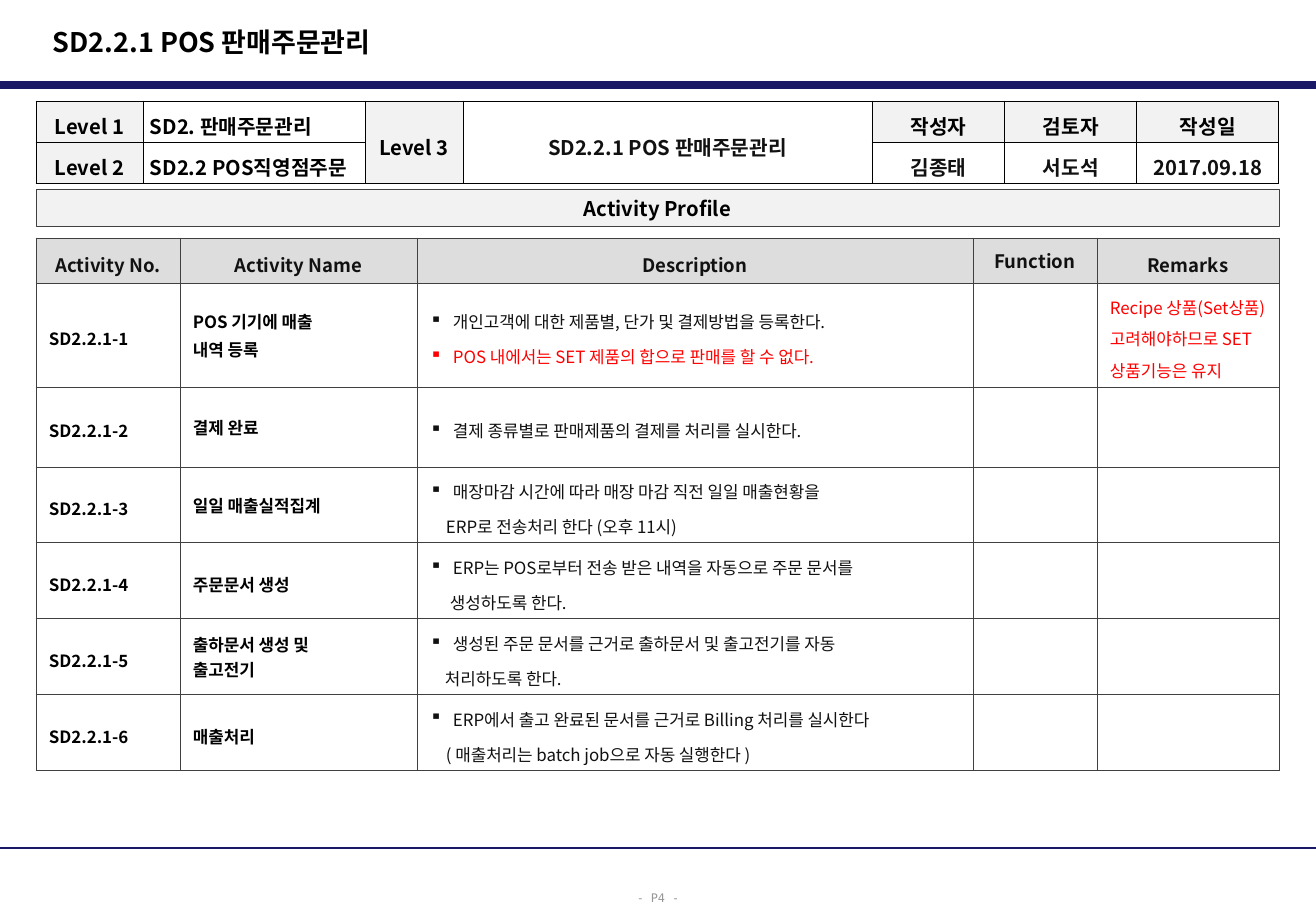
from pptx import Presentation
from pptx.dml.color import RGBColor
from pptx.enum.shapes import MSO_CONNECTOR, MSO_SHAPE
from pptx.enum.text import MSO_ANCHOR, PP_ALIGN
from pptx.oxml.ns import qn
from pptx.util import Pt
from lxml import etree

LEFT, CENTER = PP_ALIGN.LEFT, PP_ALIGN.CENTER
MIDDLE = MSO_ANCHOR.MIDDLE

TITLE = "SD2.2.1 POS 판매주문관리"
SECTION = "Activity Profile"
PAGE = "- P4 -"

LEVEL_COLS = [107, 222, 98, 409, 133, 132, 142]
LEVEL_ROWS = [41, 41]
LEVELS = [
    ["Level 1", "SD2. 판매주문관리", "Level 3", TITLE, "작성자", "검토자", "작성일"],
    ["Level 2", "SD2.2 POS직영점주문", None, None, "김종태", "서도석", "2017.09.18"],
]
LABEL_CELLS = {(0, 0), (1, 0), (0, 2), (0, 4), (0, 5), (0, 6)}
MERGED_COLS = (2, 3)

ACTIVITY_COLS = [144, 237, 556, 124, 182]
ACTIVITY_ROWS = [45, 104, 80, 76, 76, 76, 76]
HEADINGS = ["Activity No.", "Activity Name", "Description", "Function", "Remarks"]
# name lines, name line spacing, name paragraph gap,
# description lines as (text, colour key, indent in px; None for a bullet), remark
ACTIVITIES = [
    (["POS 기기에 매출", "내역 등록"], 1, 2,
     [("개인고객에 대한 제품별, 단가 및 결제방법을 등록한다.", "text", None),
      ("POS 내에서는 SET 제품의 합으로 판매를 할 수 없다.", "alert", None)],
     "Recipe 상품(Set상품)고려해야하므로 SET 상품기능은 유지"),
    (["결제 완료"], 1, 2,
     [("결제 종류별로 판매제품의 결제를 처리를 실시한다.", "text", None)], ""),
    (["일일 매출실적집계"], 1, 2,
     [("매장마감 시간에 따라 매장 마감 직전 일일 매출현황을", "text", None),
      ("ERP로 전송처리 한다 (오후 11시)", "text", 16)], ""),
    (["주문문서 생성"], 1.3, 2,
     [("ERP는 POS로부터 전송 받은 내역을 자동으로 주문 문서를", "text", None),
      ("생성하도록 한다.", "text", 20)], ""),
    (["출하문서 생성 및", "출고전기"], 1, 0,
     [("생성된 주문 문서를 근거로 출하문서 및 출고전기를 자동", "text", None),
      ("처리하도록 한다.", "text", 15)], ""),
    (["매출처리"], 1.3, 2,
     [("ERP에서 출고 완료된 문서를 근거로 Billing 처리를 실시한다", "text", None),
      ("( 매출처리는 batch job으로 자동 실행한다 )", "text", 16)], ""),
]

THEME = {
    "font": "Noto Sans CJK KR", "mono": "DejaVu Sans Mono",
    "black": "000000", "text": "111111", "alert": "FF0000", "page": "969696",
    "rule": "191966", "border": "404040", "label": "F2F2F2", "heading": "DDDDDD",
    "title_pt": 16, "level_pt": 12, "heading_pt": 11, "body_pt": 10, "page_pt": 7,
    "hairline_pt": 0.5,
}
EMU_PER_PX = 914400 / 121.5
SLIDE_W, SLIDE_H = 1316, 911
MARGIN, CONTENT_W = 36, 1243
BULLET_INDENT = 23


def px(n):
    return round(n * EMU_PER_PX)


def rgb(key):
    return RGBColor.from_string(THEME[key])


def set_indent(p, indent):
    """Indent a paragraph by px, or give it a hanging square bullet for None."""
    pPr = p._p.get_or_add_pPr()
    pPr.set("marL", str(px(BULLET_INDENT if indent is None else indent)))
    if indent is None:
        pPr.set("indent", str(-px(BULLET_INDENT)))
        etree.SubElement(pPr, qn("a:buChar")).set("char", "▪")


def write(tf, lines, size, bold=True, color="black", align=LEFT, spacing=1.3, gap=2, font="font"):
    """Fill a frame; a line is a string or (text, colour key, indent)."""
    for i, line in enumerate(lines):
        text, key, indent = (line, color, 0) if isinstance(line, str) else line
        p = tf.paragraphs[0] if i == 0 else tf.add_paragraph()
        p.text = text
        p.alignment = align
        p.line_spacing = spacing
        p.space_before = Pt(gap if i else 0)
        set_indent(p, indent)
        for r in p.runs:
            r.font.size, r.font.bold, r.font.name = Pt(THEME[size]), bold, THEME[font]
            r.font.color.rgb = rgb(key)
            etree.SubElement(r.font._element, qn("a:ea")).set("typeface", THEME[font])


def add_text(s, x, y, w, h, text, size, wrap=True, **style):
    tf = s.shapes.add_textbox(px(x), px(y), px(w), px(h)).text_frame
    tf.word_wrap, tf.vertical_anchor = wrap, MIDDLE
    write(tf, [text], size, **style)


def add_rule(s, y, weight):
    line = s.shapes.add_connector(MSO_CONNECTOR.STRAIGHT, 0, px(y), px(SLIDE_W), px(y))
    line.line.color.rgb, line.line.width = rgb("rule"), Pt(weight)
    etree.SubElement(line._element.spPr, qn("a:effectLst"))


def add_grid(s, y, cols, rows, border, inset_x, inset_y):
    """Add a plain table with every cell outlined."""
    frame = s.shapes.add_table(len(rows), len(cols), px(MARGIN), px(y),
                               px(sum(cols)), px(sum(rows)))
    table = frame.table
    table.first_row = table.horz_banding = False
    for col, w in zip(table.columns, cols):
        col.width = px(w)
    for row, h in zip(table.rows, rows):
        row.height = px(h)
    for cell in table.iter_cells():
        cell.margin_left = cell.margin_right = px(inset_x)
        cell.margin_top = cell.margin_bottom = px(inset_y)
        cell.vertical_anchor = MIDDLE
        tcPr = cell._tc.get_or_add_tcPr()
        for side in ("a:lnL", "a:lnR", "a:lnT", "a:lnB"):
            ln = etree.SubElement(tcPr, qn(side), w=str(Pt(THEME["hairline_pt"])))
            fill = etree.SubElement(ln, qn("a:solidFill"))
            etree.SubElement(fill, qn("a:srgbClr"), val=THEME[border])
        cell.fill.background()
    return table


def shade(cell, key):
    cell.fill.solid()
    cell.fill.fore_color.rgb = rgb(key)


def add_levels(s):
    table = add_grid(s, 101, LEVEL_COLS, LEVEL_ROWS, "black", 7, 1)
    for c in MERGED_COLS:
        table.cell(0, c).merge(table.cell(1, c))
    for r, row in enumerate(LEVELS):
        for c, text in enumerate(row):
            cell = table.cell(r, c)
            if (r, c) in LABEL_CELLS:
                shade(cell, "label")
            if text:
                color = "text" if c == 3 or (r == 1 and c > 3) else "black"
                write(cell.text_frame, [text], "level_pt", color=color,
                      align=LEFT if c == 1 else CENTER)


def add_activities(s):
    table = add_grid(s, 238, ACTIVITY_COLS, ACTIVITY_ROWS, "border", 13, 4)
    for c, text in enumerate(HEADINGS):
        shade(table.cell(0, c), "heading")
        write(table.cell(0, c).text_frame, [text], "heading_pt", color="text",
              align=CENTER, spacing=1 if text == "Function" else 1.3)
    for n, (name, spacing, gap, description, remark) in enumerate(ACTIVITIES, 1):
        number, title, detail, _, note = (table.cell(n, c).text_frame for c in range(5))
        write(number, [f"SD2.2.1-{n}"], "body_pt")
        write(title, name, "body_pt", spacing=spacing, gap=gap)
        write(detail, description, "body_pt", bold=False)
        if remark:
            write(note, [remark], "body_pt", bold=False, color="alert")


def add_section_bar(s):
    bar = s.shapes.add_shape(MSO_SHAPE.RECTANGLE, px(MARGIN), px(189), px(CONTENT_W), px(38))
    bar.shadow.inherit = False
    shade(bar, "label")
    bar.line.color.rgb, bar.line.width = rgb("border"), Pt(THEME["hairline_pt"])
    bar.text_frame.vertical_anchor = MIDDLE
    write(bar.text_frame, [SECTION], "level_pt", align=CENTER, spacing=1)


def main():
    prs = Presentation()
    prs.slide_width, prs.slide_height = px(SLIDE_W), px(SLIDE_H)
    s = prs.slides.add_slide(prs.slide_layouts[6])
    add_rule(s, 85, 4.5)
    add_text(s, 624, 881, 68, 30, PAGE, "page_pt", wrap=False, bold=False,
             color="page", align=CENTER, font="mono")
    add_rule(s, 848, 1.5)
    add_text(s, 41, 19, 864, 46, TITLE, "title_pt", spacing=1)
    add_activities(s)
    add_section_bar(s)
    add_levels(s)
    prs.save("out.pptx")


if __name__ == "__main__":
    main()
